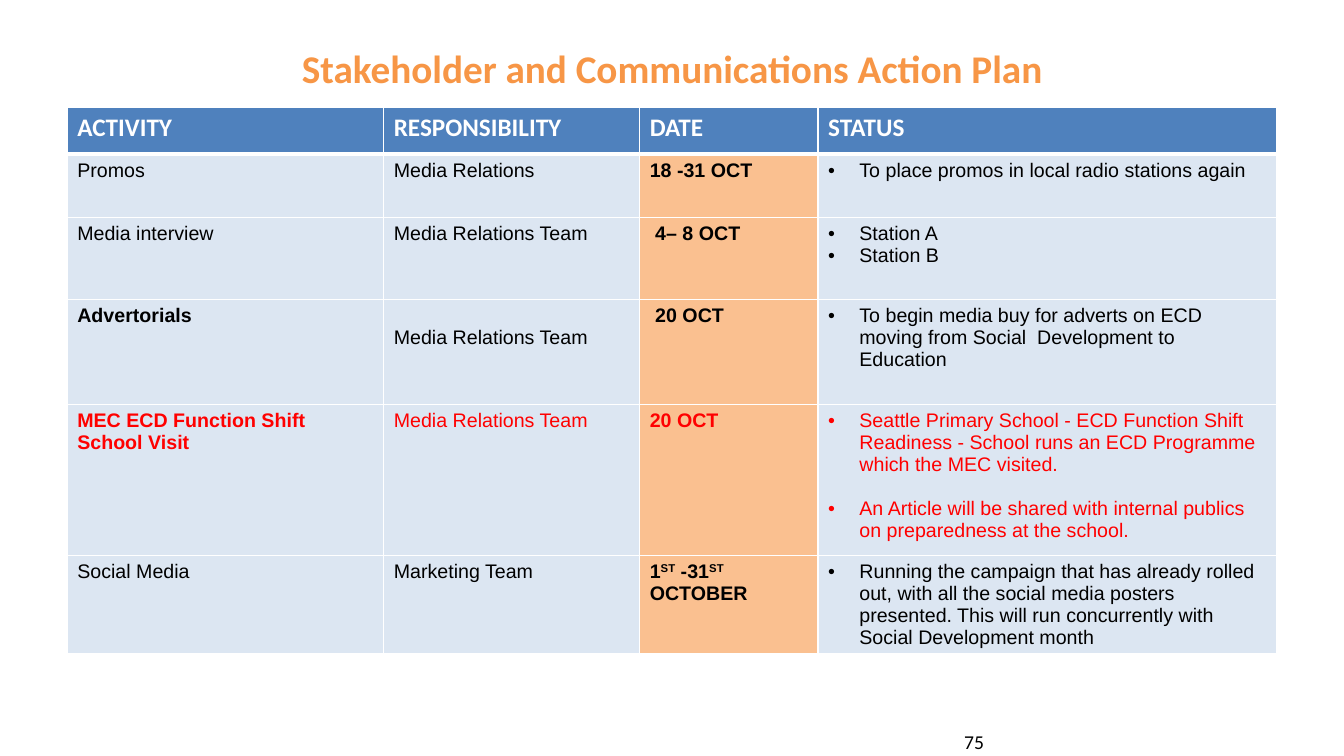
from lxml import etree
from pptx import Presentation, util as u
from pptx.dml.color import RGBColor
from pptx.enum import text as t
from pptx.oxml import ns

ORANGE = RGBColor(0xF7, 0x96, 0x46)
PEACH = RGBColor(0xFA, 0xC0, 0x90)
BLUE = RGBColor(0x4F, 0x81, 0xBD)
PALE_BLUE = RGBColor(0xDC, 0xE6, 0xF2)
RED = RGBColor(0xFF, 0x00, 0x00)
BLACK = RGBColor(0x00, 0x00, 0x00)
WHITE = RGBColor(0xFF, 0xFF, 0xFF)

SLIDE_W, SLIDE_H = u.Inches(13.33), u.Inches(7.5)
COLUMNS = [3.14, 2.54, 1.77, 4.55]
ROWS = [0.46, 0.63, 0.81, 1.04, 1.5, 0.97]
DATE, STATUS = 2, 3
INDENT = u.Inches(0.31)
LINE = u.Pt(16)

HEADINGS = ["ACTIVITY", "RESPONSIBILITY", "DATE", "STATUS"]
ACTIVITIES = [
    ["Promos", "Media Relations", "18 -31 OCT",
     "To place promos in local radio stations again"],
    ["Media interview", "Media Relations Team", " 4– 8 OCT",
     "Station A\nStation B"],
    ["Advertorials", "Media Relations Team", " 20 OCT",
     "To begin media buy for adverts on ECD moving from Social  Development to Education"],
    ["MEC ECD Function Shift School Visit", "Media Relations Team", "20 OCT",
     "Seattle Primary School - ECD Function Shift Readiness - School runs an ECD Programme "
     "which the MEC visited.\n"
     "An Article will be shared with internal publics on preparedness at the school."],
    ["Social Media", "Marketing Team", "1^ST^ -31^ST^ OCTOBER",
     "Running the campaign that has already rolled out, with all the social media posters "
     "presented. This will run concurrently with Social Development month"],
]
BOLD_ACTIVITIES = {"Advertorials", "MEC ECD Function Shift School Visit"}
VISIT_ROW, ADVERTORIALS_ROW = 4, 3


def share_box(left, top, width, height):
    """Turn shares of the slide into a box of lengths."""
    return (round(left * SLIDE_W), round(top * SLIDE_H),
            round(width * SLIDE_W), round(height * SLIDE_H))


def style(paragraph, font_name, size, color, bold=False):
    """Set the font of a whole paragraph."""
    font = paragraph.font
    font.name, font.size, font.bold = font_name, u.Pt(size), bold
    font.color.rgb = color


def add_bullet(paragraph):
    """Give a paragraph a hanging round bullet."""
    properties = paragraph._p.get_or_add_pPr()
    properties.set("marL", str(INDENT))
    properties.set("indent", str(-INDENT))
    etree.SubElement(properties, ns.qn("a:buFont")).set("typeface", "Arial")
    etree.SubElement(properties, ns.qn("a:buChar")).set("char", "•")


def add_borders(cell, top=1, bottom=1):
    """Draw white lines on the four sides of a cell."""
    properties = cell._tc.get_or_add_tcPr()
    sides = {"L": 1, "R": 1, "T": top, "B": bottom}
    for place, (side, points) in enumerate(sides.items()):
        line = etree.Element(ns.qn(f"a:ln{side}"), w=str(u.Pt(points)))
        fill = etree.SubElement(line, ns.qn("a:solidFill"))
        etree.SubElement(fill, ns.qn("a:srgbClr")).set("val", str(WHITE))
        properties.insert(place, line)


def write_raised(paragraph, marked):
    """Write text whose parts between carets are superscript."""
    for place, part in enumerate(marked.split("^")):
        run = paragraph.add_run()
        run.text = part
        if place % 2:
            run._r.get_or_add_rPr().set("baseline", "30000")


def fill_cell(cell, wording, row, column):
    """Write and format one cell of the action plan."""
    header = row == 0
    cell.fill.solid()
    cell.fill.fore_color.rgb = BLUE if header else PEACH if column == DATE else PALE_BLUE
    add_borders(cell, top=3 if row == 1 else 1, bottom=3 if header else 1)
    for place, line in enumerate(wording.split("\n")):
        frame = cell.text_frame
        paragraph = frame.add_paragraph() if place else frame.paragraphs[0]
        write_raised(paragraph, line)
        if header:
            style(paragraph, "Calibri", 18, WHITE, True)
            continue
        if place and row == VISIT_ROW:
            paragraph.space_before = LINE
        if column == STATUS:
            add_bullet(paragraph)
        style(paragraph, "Arial", 14, RED if row == VISIT_ROW else BLACK,
              column == DATE or line in BOLD_ACTIVITIES)


def add_heading(slide, box):
    """Place the slide title in its box."""
    title = slide.shapes.title
    title.left, title.top, title.width, title.height = box
    title.text_frame.text = "Stakeholder and Communications Action Plan"
    title.text_frame.vertical_anchor = t.MSO_ANCHOR.MIDDLE
    paragraph = title.text_frame.paragraphs[0]
    paragraph.alignment = t.PP_ALIGN.CENTER
    style(paragraph, "Calibri", 28, ORANGE, True)


def add_plan(slide, box):
    """Place the action plan table, its grid scaled to the box."""
    plan = slide.shapes.add_table(len(ROWS), len(COLUMNS), *box).table
    plan.horz_banding = False
    for column, width in zip(plan.columns, COLUMNS):
        column.width = round(box[2] * width / sum(COLUMNS))
    for row, height in zip(plan.rows, ROWS):
        row.height = round(box[3] * height / sum(ROWS))
    for row, wordings in enumerate([HEADINGS] + ACTIVITIES):
        for column, wording in enumerate(wordings):
            fill_cell(plan.cell(row, column), wording, row, column)
    plan.cell(ADVERTORIALS_ROW, 1).margin_top = u.Inches(0.05) + LINE


def add_page_number(slide, box):
    """Place the page number in its box."""
    frame = slide.shapes.add_textbox(*box).text_frame
    frame.word_wrap = True
    frame.vertical_anchor = t.MSO_ANCHOR.MIDDLE
    frame.text = "75"
    style(frame.paragraphs[0], "Calibri", 14, BLACK)


def main():
    """Build and save the slide."""
    deck = Presentation()
    deck.slide_width, deck.slide_height = SLIDE_W, SLIDE_H
    slide = deck.slides.add_slide(deck.slide_layouts[5])
    add_heading(slide, share_box(0.05, 0.04, 0.9, 0.1))
    add_plan(slide, share_box(0.05, 1.07 / 7.5, 0.9, sum(ROWS) / 7.5))
    add_page_number(slide, share_box(0.71, 7.16 / 7.5, 0.04, 0.4 / 7.5))
    deck.save("out.pptx")


if __name__ == "__main__":
    main()
